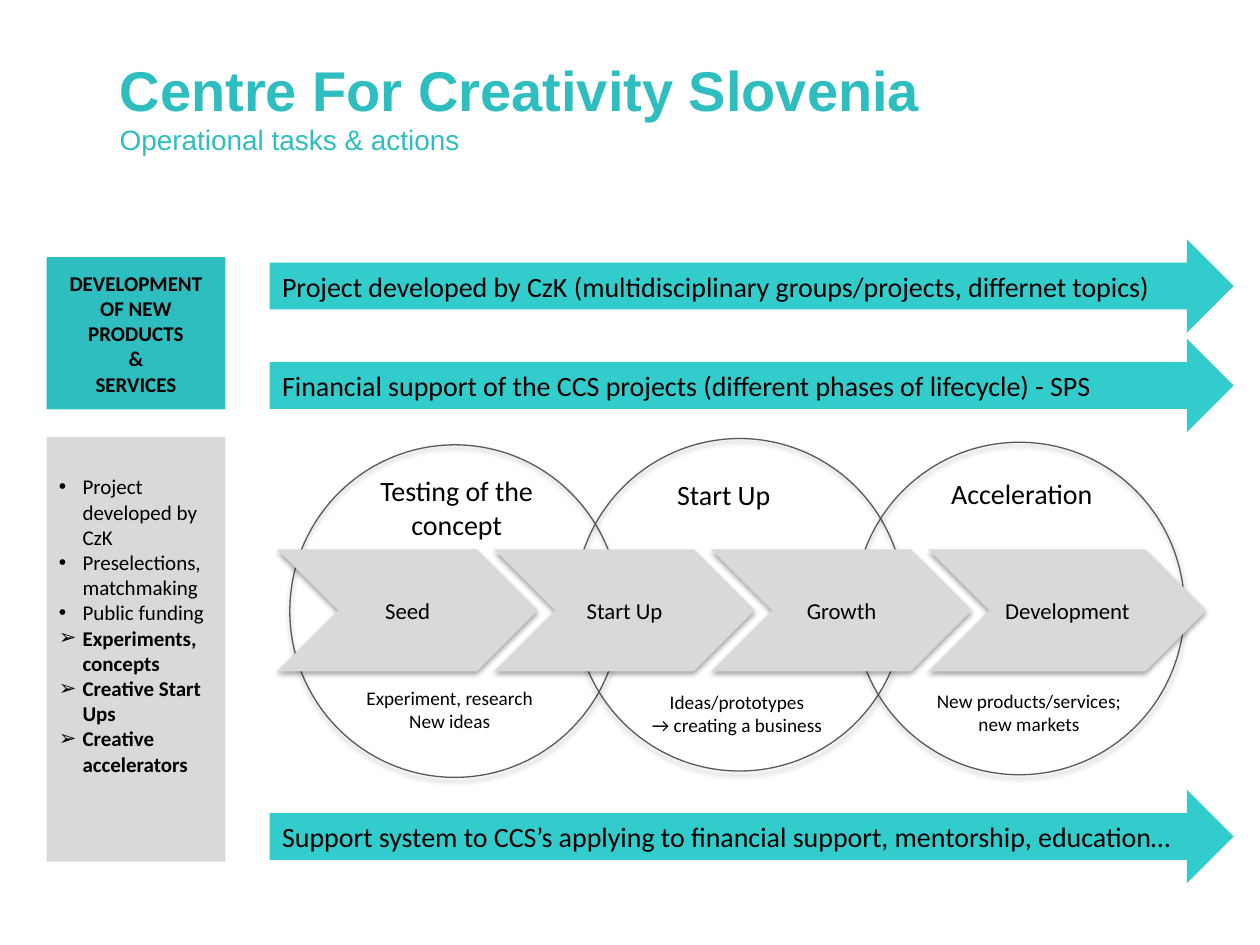
from lxml.etree import SubElement
from pptx import Presentation
from pptx.dml.color import RGBColor
from pptx.enum.shapes import MSO_SHAPE
from pptx.enum.text import MSO_ANCHOR, MSO_AUTO_SIZE, PP_ALIGN
from pptx.oxml.ns import qn
from pptx.util import Pt

TEAL = RGBColor(0x2F, 0xBE, 0xBF)
TURQUOISE = RGBColor(0x33, 0xCC, 0xCC)
GREY = RGBColor(0xD9, 0xD9, 0xD9)
OUTLINE = RGBColor(0x59, 0x59, 0x59)
BLACK = RGBColor(0x00, 0x00, 0x00)

SIDEBAR_LEFT, SIDEBAR_WIDTH = 26.6, 102.2
CIRCLE_WIDTH, CIRCLE_HEIGHT = 188.6, 190
CHEVRON_LEFT, CHEVRON_PITCH = 158.4, 124
LABEL_WIDTH = 130
BULLET_INDENT = 13.5

CIRCLES = [(165.6, 254.2), (328.3, 250.6), (488.2, 252.7)]
STAGES = [("Seed", 149), ("Start Up", 149), ("Growth", 149), ("Development", 159)]
HEADINGS = [
    (261, 267.1, ["Testing of the", "concept"]),
    (413.6, 269.3, ["Start Up"]),
    (583.9, 268.6, ["Acceleration"]),
]
CAPTIONS = [
    (257, 388.8, ["Experiment, research", "New ideas"]),
    (421.2, 391, ["Ideas/prototypes", "→ creating a business"]),
    (588, 390.2, ["New products/services;", "new markets"]),
]
TASKS = [
    ("•", "Project developed by CzK"),
    ("•", "Preselections, matchmaking"),
    ("•", "Public funding"),
    ("➢", "Experiments, concepts"),
    ("➢", "Creative Start Ups"),
    ("➢", "Creative accelerators"),
]
ARROWS = [
    (136.8, "Project developed by CzK (multidisciplinary groups/projects, differnet topics)"),
    (193.7, "Financial support of the CCS projects (different phases of lifecycle) - SPS"),
    (451.4, "Support system to CCS’s applying to financial support, mentorship, education…"),
]


def add_run(paragraph, text, size, bold=False, color=BLACK, font="Calibri"):
    """Append one formatted run to a paragraph."""
    run = paragraph.add_run()
    run.text = text
    run.font.name = font
    run.font.size = Pt(size)
    run.font.bold = bold
    run.font.color.rgb = color


def write_lines(frame, lines, size, bold=False, alignment=PP_ALIGN.CENTER):
    """Write each line as a paragraph of the text frame."""
    for index, line in enumerate(lines):
        paragraph = frame.add_paragraph() if index else frame.paragraphs[0]
        paragraph.alignment = alignment
        add_run(paragraph, line, size, bold)


def add_block(slide, kind, left, top, width, height, fill=None, line=None):
    """Add a preset shape with plain fill and outline and no shadow."""
    shape = slide.shapes.add_shape(kind, Pt(left), Pt(top), Pt(width), Pt(height))
    if fill is None:
        shape.fill.background()
    else:
        shape.fill.solid()
        shape.fill.fore_color.rgb = fill
    if line is None:
        shape.line.fill.background()
    else:
        shape.line.color.rgb = line
        shape.line.width = Pt(0.75)
    shape.shadow.inherit = False
    shape.text_frame.word_wrap = True
    shape.text_frame.vertical_anchor = MSO_ANCHOR.MIDDLE
    return shape


def add_shadow(shape):
    """Give a shape a soft shadow that falls straight down."""
    effects = shape._element.spPr.find(qn("a:effectLst"))
    shadow = SubElement(effects, qn("a:outerShdw"), blurRad=str(Pt(3.1)),
                        dist=str(Pt(1.8)), dir="5400000", rotWithShape="0")
    color = SubElement(shadow, qn("a:srgbClr"), val="000000")
    SubElement(color, qn("a:alpha"), val="35000")


def add_label(slide, center, top, lines, size):
    """Add an unwrapped text box centred on a horizontal position."""
    box = slide.shapes.add_textbox(Pt(center - LABEL_WIDTH / 2), Pt(top), Pt(LABEL_WIDTH),
                                   Pt(7.2 + 1.22 * size * len(lines)))
    box.text_frame.word_wrap = False
    write_lines(box.text_frame, lines, size)


def add_title(slide):
    """Place the title placeholder and write heading and subheading."""
    title = slide.shapes.title
    title.left, title.top, title.width, title.height = Pt(61.2), Pt(28.1), Pt(577.4), Pt(65.5)
    frame = title.text_frame
    frame.word_wrap = True
    frame.auto_size = MSO_AUTO_SIZE.NONE
    frame.vertical_anchor = MSO_ANCHOR.TOP
    paragraph = frame.paragraphs[0]
    paragraph.alignment = PP_ALIGN.LEFT
    add_run(paragraph, "Centre For Creativity Slovenia", 32, True, TEAL, "Arial")
    paragraph.add_line_break()
    add_run(paragraph, "Operational tasks & actions", 16, False, TEAL, "Arial")


def add_task_list(slide):
    """Add the grey sidebar with its bulleted tasks."""
    panel = add_block(slide, MSO_SHAPE.RECTANGLE, SIDEBAR_LEFT, 249.8,
                      SIDEBAR_WIDTH, 242.6, GREY)
    frame = panel.text_frame
    frame.vertical_anchor = MSO_ANCHOR.TOP
    frame.margin_top = Pt(21)
    write_lines(frame, [text for _, text in TASKS], 12, alignment=PP_ALIGN.LEFT)
    for paragraph, (bullet, _) in zip(frame.paragraphs, TASKS):
        properties = paragraph._p.get_or_add_pPr()
        properties.set("marL", str(Pt(BULLET_INDENT)))
        properties.set("indent", str(-Pt(BULLET_INDENT)))
        SubElement(properties, qn("a:buFont"), typeface="Arial")
        SubElement(properties, qn("a:buChar"), char=bullet)
        paragraph.runs[0].font.bold = bullet == "➢"


def add_lifecycle(slide):
    """Add the circles, the stage chevrons and their labels."""
    for left, top in CIRCLES:
        add_shadow(add_block(slide, MSO_SHAPE.OVAL, left, top,
                             CIRCLE_WIDTH, CIRCLE_HEIGHT, line=OUTLINE))
    for index, (name, width) in enumerate(STAGES):
        chevron = add_block(slide, MSO_SHAPE.CHEVRON, CHEVRON_LEFT + index * CHEVRON_PITCH,
                            313.9, width, 69.8, GREY)
        add_shadow(chevron)
        chevron.text_frame.word_wrap = False
        write_lines(chevron.text_frame, [name], 13)
    for labels, size in ((HEADINGS, 16), (CAPTIONS, 11)):
        for center, top, lines in labels:
            add_label(slide, center, top, lines, size)


def main():
    """Build the slide and save it."""
    presentation = Presentation()
    presentation.slide_width, presentation.slide_height = Pt(720), Pt(540)
    slide = presentation.slides.add_slide(presentation.slide_layouts[5])
    add_title(slide)
    goal = add_block(slide, MSO_SHAPE.RECTANGLE, SIDEBAR_LEFT, 146.9,
                     SIDEBAR_WIDTH, 87.1, TEAL)
    write_lines(goal.text_frame, ["DEVELOPMENT OF NEW PRODUCTS", "&", "SERVICES"], 12, True)
    add_lifecycle(slide)
    add_task_list(slide)
    for top, text in ARROWS:
        arrow = add_block(slide, MSO_SHAPE.RIGHT_ARROW, 154.1, top, 550.8, 53.3, TURQUOISE)
        write_lines(arrow.text_frame, [text], 16, alignment=PP_ALIGN.LEFT)
    presentation.save("out.pptx")


if __name__ == "__main__":
    main()
